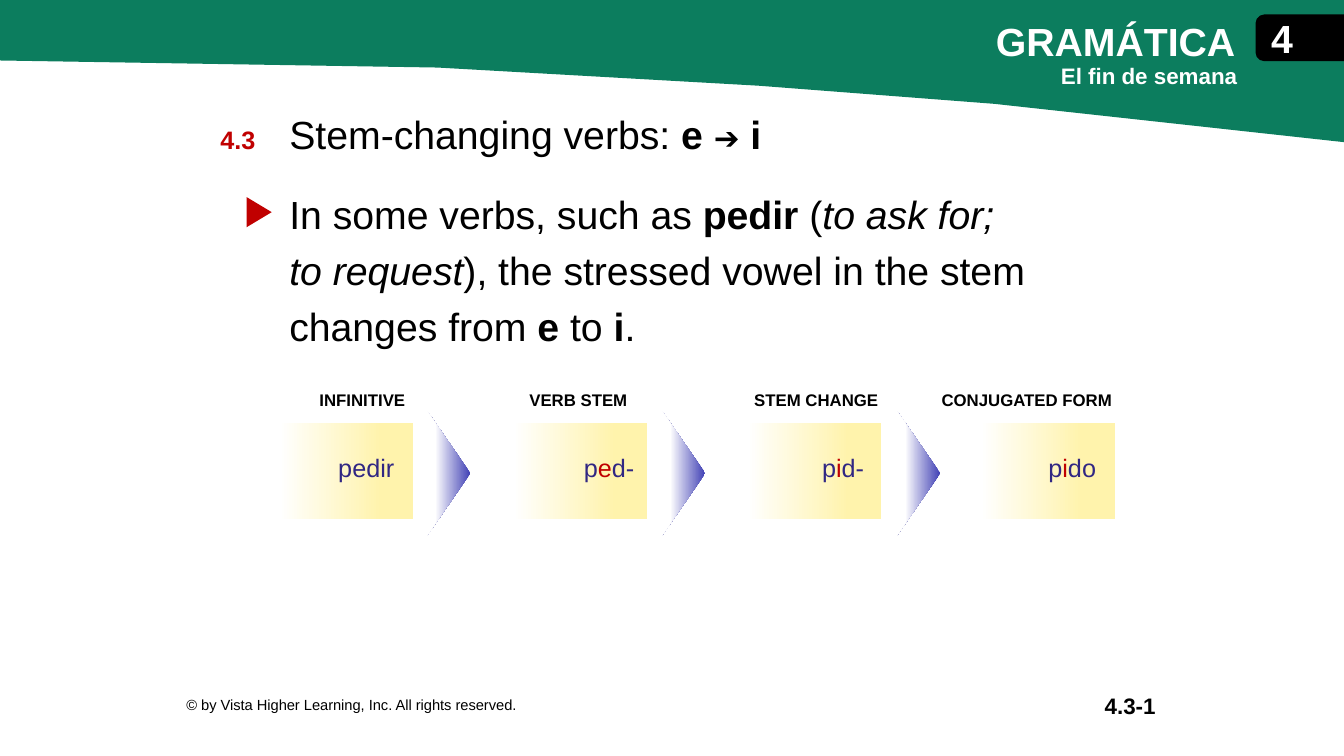
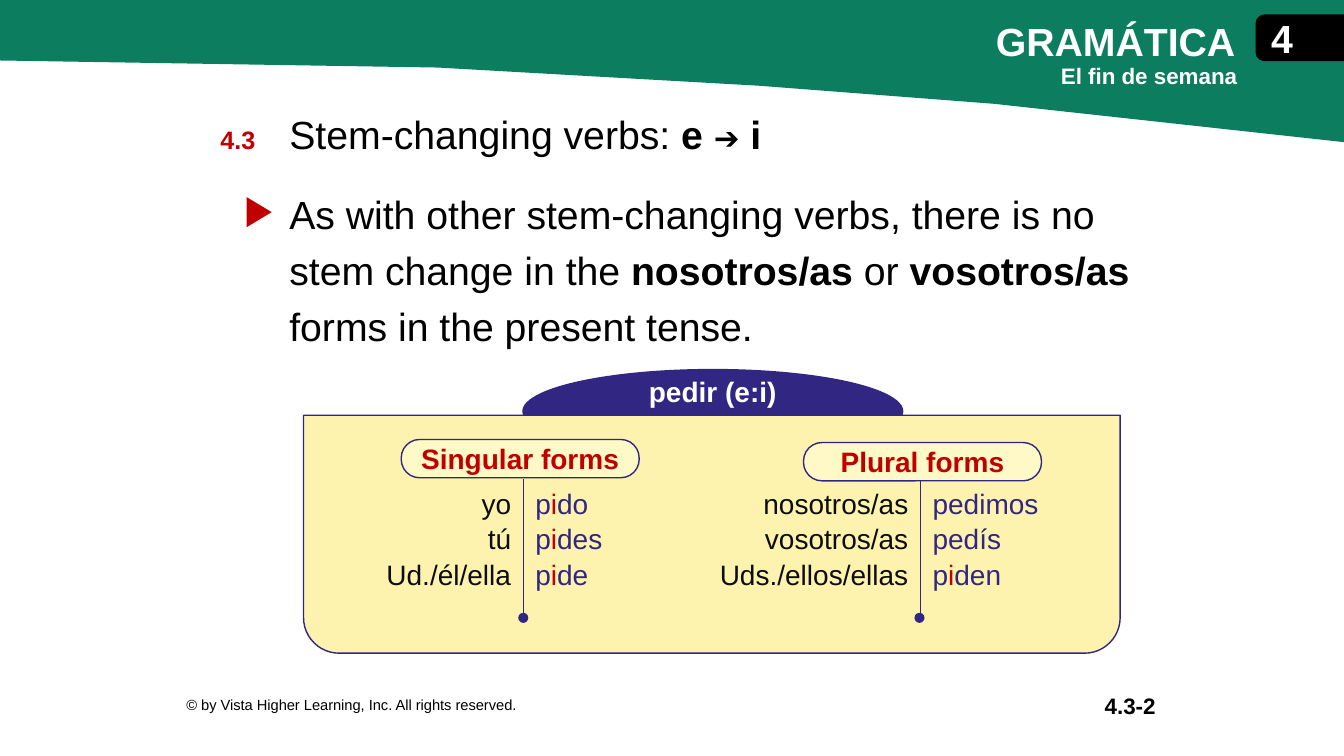
from dataclasses import dataclass

from lxml.etree import SubElement
from pptx import Presentation
from pptx.dml.color import RGBColor
from pptx.enum.shapes import MSO_SHAPE
from pptx.enum.text import MSO_ANCHOR, MSO_AUTO_SIZE, PP_ALIGN
from pptx.oxml.ns import qn
from pptx.util import Inches, Pt


@dataclass(frozen=True)
class Theme:
    font: str = "Arial"
    green: str = "0C7D5E"
    red: str = "C00000"
    navy: str = "312783"
    blue: str = "4141B5"
    cream: str = "FDF2AE"
    yellow: str = "FFF3AC"
    pale: str = "FFF9C7"
    black: str = "000000"
    ink: str = "0D0D0D"
    white: str = "FFFFFF"
    large: float = 28
    arrow: float = 22
    form: float = 20
    mid: float = 18
    small: float = 16
    label: float = 12
    note: float = 10.5


T = Theme()
LEFT, MID, RIGHT = PP_ALIGN.LEFT, PP_ALIGN.CENTER, PP_ALIGN.RIGHT
TOP, CENTER = MSO_ANCHOR.TOP, MSO_ANCHOR.MIDDLE
PAD = (0.1, 0.05, 0.1, 0.05)
NO_GRID = "{2D5ABB26-0587-4C30-8999-92F81FD0307C}"


def rgb(code):
    return RGBColor.from_string(code)


def inches(*sizes):
    return [Inches(size) for size in sizes]


def bold(text):
    return text, {"bold": True}


def slant(text):
    return text, {"italic": True}


def red(text):
    return text, {"color": T.red}


def style(font, size=None, color=None, bold=None, italic=None):
    if size:
        font.size = Pt(size)
    if color:
        font.color.rgb = rgb(color)
    if bold is not None:
        font.bold = bold
    if italic is not None:
        font.italic = italic


def write(frame, lines, size, color, bold=False, align=LEFT, after=0):
    for i, line in enumerate(lines):
        para = frame.paragraphs[0] if i == 0 else frame.add_paragraph()
        para.alignment = align
        para.space_after = Pt(after)
        para.font.name = T.font
        style(para.font, size, color, bold)
        for part in [line] if isinstance(line, str) else line:
            text, look = (part, {}) if isinstance(part, str) else part
            run = para.add_run()
            run.text = text
            style(run.font, **look)


def inset(item, pad):
    (item.margin_left, item.margin_top,
     item.margin_right, item.margin_bottom) = inches(*pad)


def fit(frame, pad=PAD, anchor=TOP):
    frame.word_wrap = True
    frame.auto_size = MSO_AUTO_SIZE.NONE
    frame.vertical_anchor = anchor
    inset(frame, pad)


def add_text(slide, box, line, size, color=T.black, bold=False,
             align=LEFT, anchor=TOP, pad=PAD):
    frame = slide.shapes.add_textbox(*inches(*box)).text_frame
    fit(frame, pad, anchor)
    write(frame, [line], size, color, bold, align)
    return frame


def paint(shape, fill, line=None):
    shape.shadow.inherit = False
    if fill:
        shape.fill.solid()
        shape.fill.fore_color.rgb = rgb(fill)
    else:
        shape.fill.background()
    if line:
        shape.line.color.rgb = rgb(line)
        shape.line.width = Pt(1)
    else:
        shape.line.fill.background()


def add_shape(slide, kind, box, fill=None, line=None, turn=0, round=None):
    shape = slide.shapes.add_shape(kind, *inches(*box))
    paint(shape, fill, line)
    shape.rotation = turn
    if round is not None:
        shape.adjustments[0] = round
    return shape


def add_badge(slide, box, text, size, color, fill=None, line=None,
              round=None, kind=MSO_SHAPE.ROUNDED_RECTANGLE, pad=PAD):
    shape = add_shape(slide, kind, box, fill, line, round=round)
    fit(shape.text_frame, pad, CENTER)
    write(shape.text_frame, [text], size, color, True, MID)


def blend(shape, angle, *stops):
    shape.fill.gradient()
    shape.fill.gradient_angle = angle
    for stop, (place, color) in zip(shape.fill.gradient_stops, stops):
        stop.position = place
        stop.color.rgb = rgb(color)


def add_band(slide):
    pen = slide.shapes.build_freeform(1333, 141, scale=Inches(0.01))
    pen.add_line_segments(
        [(986, 103), (752, 85), (434, 67), (0, 60), (0, -1), (1333, 0)])
    paint(pen.convert_to_shape(), T.green)
    add_text(slide, (9.78, 0.12, 3.55, 0.57), "GRAMÁTICA",
             T.large, T.white, True)
    add_text(slide, (10.18, 0.57, 2.19, 0.37), "El fin de semana",
             T.small, T.white, True, RIGHT)
    add_shape(slide, MSO_SHAPE.ROUND_2_SAME_RECTANGLE,
              (12.67, -0.06, 0.45, 0.87), T.black, T.black, 270, 0.18)
    add_badge(slide, (12.49, 0.18, 0.45, 0.4), "4", T.large, T.white)


def add_page(deck, number, width, body):
    slide = deck.slides.add_slide(deck.slide_layouts[5])
    title = slide.shapes.title
    title.left, title.top, title.width, title.height = inches(
        2.77, 1.04, 8.28, 0.57)
    fit(title.text_frame)
    arrow = "➔", {"size": T.arrow, "bold": True}
    write(title.text_frame,
          [["Stem-changing verbs: ", bold("e "), arrow, bold(" i")]],
          T.large, T.black)
    add_badge(slide, (1.95, 1.18, 0.82, 0.4), "4.3", T.mid, T.red)
    add_band(slide)
    add_shape(slide, MSO_SHAPE.ISOSCELES_TRIANGLE,
              (2.42, 1.98, 0.3, 0.25), T.red, turn=90)
    frame = add_text(slide, (2.27, 1.75, width, 1.7), body, T.large,
                     pad=(0.6, 0.05, 0.1, 0.05))
    frame.paragraphs[0].line_spacing = Pt(40)
    add_text(slide, (8.55, 6.82, 3.01, 0.35), f"4.3-{number}",
             T.small, bold=True, align=RIGHT, anchor=CENTER)
    add_text(slide, (1.75, 6.82, 6.45, 0.35),
             "© by Vista Higher Learning, Inc. All rights reserved.",
             T.note, anchor=CENTER)
    return slide


def add_rules(cell, ruled):
    props = cell._tc.get_or_add_tcPr()
    for side in ("lnL", "lnR", "lnT", "lnB"):
        line = SubElement(props, qn(f"a:{side}"), w=str(Pt(1)))
        if side == ruled:
            fill = SubElement(line, qn("a:solidFill"))
            SubElement(fill, qn("a:srgbClr"), val=T.navy)
        else:
            SubElement(line, qn("a:noFill"))


def add_grid(slide, left, top, widths, height):
    frame = slide.shapes.add_table(
        1, len(widths), *inches(left, top, sum(widths), height))
    frame.element.find(f".//{qn('a:tableStyleId')}").text = NO_GRID
    table = frame.table
    table.first_row = table.horz_banding = False
    for column, width in zip(table.columns, widths):
        column.width = Inches(width)
    return table


def set_cell(cell, lines, pad, size, color, bold=False, align=LEFT,
             after=0, ruled=None):
    inset(cell, pad)
    write(cell.text_frame, lines, size, color, bold, align, after)
    add_rules(cell, ruled)
    cell.fill.background()


def add_steps(slide, steps):
    for i, (label, head, wide, align, word, left, width) in enumerate(steps):
        card = add_shape(slide, MSO_SHAPE.RECTANGLE,
                         (2.77 + i * 2.32, 4.2, 1.33, 0.95))
        blend(card, 0, (0, T.white), (0.76, T.yellow))
        if i < len(steps) - 1:
            tip = add_shape(slide, MSO_SHAPE.ISOSCELES_TRIANGLE,
                            (3.83 + i * 2.33, 4.48, 1.24, 0.43), turn=90)
            blend(tip, 270, (0, T.blue), (0.81, T.white))
        grid = add_grid(slide, head, 3.78, [wide], 0.35)
        set_cell(grid.cell(0, 0), [label], (0.1, 0.1, 0.3, 0.1),
                 T.label, T.black, True, align, 6)
        grid = add_grid(slide, left, 4.38, [width], 0.5)
        set_cell(grid.cell(0, 0), [word], (0.13, 0.13, 0.38, 0.13),
                 T.mid, T.navy, align=RIGHT, after=12)


def add_forms(slide, cells):
    grid = add_grid(slide, 3.52, 4.75, (1.67, 1.51, 2.43, 1.88), 1.36)
    for i, lines in enumerate(cells):
        verb = i % 2 == 1
        pad = (0.12 if i else 0.08, 0.1, 0 if i == 1 else 0.12, 0)
        set_cell(grid.cell(0, i), lines, pad, T.form,
                 T.navy if verb else T.ink, align=LEFT if verb else RIGHT,
                 after=3, ruled="lnL" if verb else "lnR")


def add_chart(slide, verb, heads, cells):
    add_badge(slide, (5.18, 3.66, 3.78, 0.84), verb, T.form, T.white,
              T.navy, kind=MSO_SHAPE.OVAL, pad=(0.1, 0, 0.1, 0.4))
    add_shape(slide, MSO_SHAPE.ROUND_2_SAME_RECTANGLE,
              (3.01, 4.12, 8.1, 2.36), T.cream, T.navy, 180, 0.15)
    add_forms(slide, cells)
    for text, left, top, dot in heads:
        add_badge(slide, (left, top, 2.36, 0.38), text, T.form, T.red,
                  T.pale, T.navy, 0.48)
        add_shape(slide, MSO_SHAPE.OVAL, (dot, 6.08, 0.1, 0.1), T.navy)


def main():
    deck = Presentation()
    deck.slide_width, deck.slide_height = inches(13.33, 7.5)

    slide = add_page(deck, 1, 8.1, [
        "In some verbs, such as ", bold("pedir"), " (",
        slant("to ask for; to request"),
        "), the stressed vowel in the stem changes from ",
        bold("e"), " to ", bold("i"), "."])
    add_steps(slide, [
        ("INFINITIVE", 2.44, 1.88, RIGHT, "pedir", 2.89, 1.4),
        ("VERB STEM", 5.15, 1.56, LEFT, ["p", red("e"), "d-"], 5.31, 1.36),
        ("STEM CHANGE", 7.38, 1.68, LEFT, ["p", red("i"), "d-"], 7.59, 1.36),
        ("CONJUGATED FORM", 9.16, 2.17, RIGHT,
         ["p", red("i"), "do"], 9.89, 1.36)])

    slide = add_page(deck, 2, 9.23, [
        "As with other stem-changing verbs, there is no stem change in the ",
        bold("nosotros/as "), "or ", bold("vosotros/as "),
        "forms in the present tense."])
    add_chart(
        slide, "pedir (e:i)",
        [("Singular forms", 3.98, 4.36, 5.14),
         ("Plural forms", 7.97, 4.39, 9.07)],
        [["yo", "tú", "Ud./él/ella"],
         [["p", red("i"), end] for end in ("do", "des", "de")],
         ["nosotros/as", "vosotros/as", "Uds./ellos/ellas"],
         ["pedimos", "pedís", ["p", red("i"), "den"]]])

    deck.save("out.pptx")


if __name__ == "__main__":
    main()
